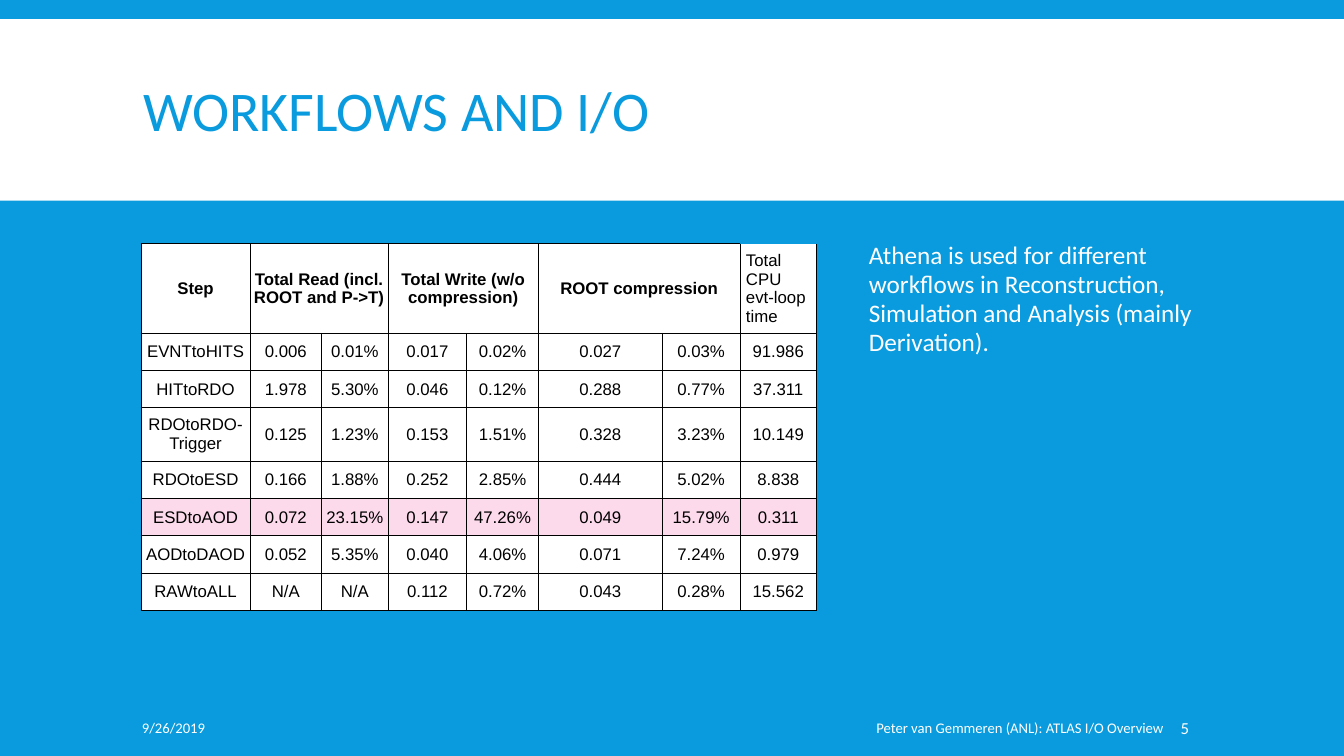
from lxml import etree
from pptx import Presentation
from pptx.dml.color import RGBColor
from pptx.enum.shapes import MSO_SHAPE
from pptx.enum.text import MSO_ANCHOR, PP_ALIGN
from pptx.oxml.ns import qn
from pptx.util import Inches, Pt

BLUE, WHITE, BLACK, PINK = "099BDD", "FFFFFF", "000000", "FCD9EB"

COLUMN_WIDTHS = [1.08, 0.71, 0.66, 0.78, 0.71, 1.23, 0.77, 0.76]
ROW_HEIGHTS = [0.88, 0.37, 0.37, 0.53, 0.37, 0.37, 0.37, 0.37]
HEADINGS = {0: "Step", 1: "Total Read (incl. ROOT and P->T)",
            3: "Total Write (w/o compression)", 5: "ROOT compression",
            7: "Total CPU evt-loop time"}
PAIRED_COLUMNS = [1, 3, 5]
HIGHLIGHTED_STEP = "ESDtoAOD"
STEPS = [
    ["EVNTtoHITS", "0.006", "0.01%", "0.017", "0.02%", "0.027", "0.03%", "91.986"],
    ["HITtoRDO", "1.978", "5.30%", "0.046", "0.12%", "0.288", "0.77%", "37.311"],
    ["RDOtoRDO-Trigger", "0.125", "1.23%", "0.153", "1.51%", "0.328", "3.23%", "10.149"],
    ["RDOtoESD", "0.166", "1.88%", "0.252", "2.85%", "0.444", "5.02%", "8.838"],
    ["ESDtoAOD", "0.072", "23.15%", "0.147", "47.26%", "0.049", "15.79%", "0.311"],
    ["AODtoDAOD", "0.052", "5.35%", "0.040", "4.06%", "0.071", "7.24%", "0.979"],
    ["RAWtoALL", "N/A", "N/A", "0.112", "0.72%", "0.043", "0.28%", "15.562"],
]


def color(value):
    return RGBColor.from_string(value)


def write(frame, text, size=12, font="Calibri", ink=WHITE, bold=False,
          align=PP_ALIGN.LEFT, line_spacing=None, before=0, after=0):
    para = frame.paragraphs[0]
    para.alignment = align
    para.line_spacing = line_spacing
    para.space_before, para.space_after = Pt(before), Pt(after)
    span = para.add_run()
    span.text = text
    span.font.size, span.font.name, span.font.bold = Pt(size), font, bold
    span.font.color.rgb = color(ink)


def set_margins(target, left, top, right, bottom):
    target.margin_left, target.margin_top = Inches(left), Inches(top)
    target.margin_right, target.margin_bottom = Inches(right), Inches(bottom)


def add_text(page, box, text, anchor=MSO_ANCHOR.TOP,
             margins=(0.1, 0.05, 0.1, 0.05), **style):
    frame = page.shapes.add_textbox(*map(Inches, box)).text_frame
    frame.word_wrap = True
    frame.vertical_anchor = anchor
    set_margins(frame, *margins)
    write(frame, text, **style)


def add_header(page, box):
    left, top, width, height = box
    # White band behind the title
    band = page.shapes.add_shape(MSO_SHAPE.RECTANGLE, *map(Inches, box))
    band.shadow.inherit = False
    band.fill.solid()
    band.fill.fore_color.rgb = color(WHITE)
    band.line.fill.background()
    page.shapes._spTree.insert(2, band._element)
    # Title
    title = page.shapes.title
    title.left, title.top = Inches(left + 1.32), Inches(top + 0.12)
    title.width, title.height = Inches(width - 2.63), Inches(height - 0.15)
    title.text_frame.word_wrap = True
    title.text_frame.vertical_anchor = MSO_ANCHOR.MIDDLE
    write(title.text_frame, "WORKFLOWS AND I/O", size=40, ink=BLUE, line_spacing=0.85)


def add_borders(cell, hidden=()):
    properties = cell._tc.get_or_add_tcPr()
    for side in ("L", "R", "T", "B"):
        line = etree.SubElement(properties, qn(f"a:ln{side}"), w=str(Pt(0.75)))
        if side in hidden:
            etree.SubElement(line, qn("a:noFill"))
        else:
            fill = etree.SubElement(line, qn("a:solidFill"))
            etree.SubElement(fill, qn("a:srgbClr"), val=BLACK)


def format_cell(cell, text, fill, is_note=False, bold=False):
    add_borders(cell, hidden=("T",) if is_note else ())
    cell.fill.solid()
    cell.fill.fore_color.rgb = color(fill)
    if is_note:
        set_margins(cell, 0.06, 0.07, 0.06, 0.07)
    else:
        set_margins(cell, 0.02, 0.03, 0.02, 0.03)
    cell.vertical_anchor = MSO_ANCHOR.TOP if is_note else MSO_ANCHOR.MIDDLE
    if text:
        write(cell.text_frame, text, font="Arial", ink=BLACK, bold=bold,
              align=PP_ALIGN.LEFT if is_note else PP_ALIGN.CENTER)


def add_timing_table(page, box):
    table = page.shapes.add_table(len(ROW_HEIGHTS), len(COLUMN_WIDTHS),
                                  *map(Inches, box)).table
    table.first_row = table.horz_banding = False
    for column, width in zip(table.columns, COLUMN_WIDTHS):
        column.width = Inches(width)
    for row, height in zip(table.rows, ROW_HEIGHTS):
        row.height = Inches(height)
    # Heading row
    last = len(COLUMN_WIDTHS) - 1
    for index in range(last + 1):
        format_cell(table.cell(0, index), HEADINGS.get(index), WHITE,
                    is_note=index == last, bold=index != last)
    for index in PAIRED_COLUMNS:
        table.cell(0, index).merge(table.cell(0, index + 1))
    # One row per workflow step
    for row_index, values in enumerate(STEPS, start=1):
        fill = PINK if values[0] == HIGHLIGHTED_STEP else WHITE
        for index, value in enumerate(values):
            format_cell(table.cell(row_index, index), value, fill)


def add_footer(page, box):
    left, top, width, height = box
    parts = [
        ("9/26/2019", 0, 3.28, (0.1, 0.05, 0.05, 0.05), 10.5, PP_ALIGN.LEFT),
        ("Peter van Gemmeren (ANL): ATLAS I/O Overview", width - 6.57, 5.52,
         (0.1, 0.05, 0.1, 0.05), 10.5, PP_ALIGN.RIGHT),
        ("5", width - 1.03, 1.03, (0.05, 0.05, 0.1, 0.05), 12, PP_ALIGN.LEFT),
    ]
    for text, offset, part_width, margins, size, align in parts:
        add_text(page, (left + offset, top, part_width, height), text,
                 anchor=MSO_ANCHOR.MIDDLE, margins=margins, size=size, align=align)


def main():
    deck = Presentation()
    deck.slide_width, deck.slide_height = Inches(13.33), Inches(7.5)
    page = deck.slides.add_slide(deck.slide_layouts[5])
    page.background.fill.solid()
    page.background.fill.fore_color.rgb = color(BLUE)

    add_header(page, (0, 0.19, 13.33, 1.8))
    add_timing_table(page, (1.4, 2.42, 6.7, 3.67))
    add_text(page, (8.52, 2.35, 3.5, 3.75),
             "Athena is used for different workflows in Reconstruction, "
             "Simulation and Analysis (mainly Derivation).",
             size=18, line_spacing=0.95, before=12, after=2)
    add_footer(page, (1.31, 7.02, 11.38, 0.4))
    deck.save("out.pptx")


if __name__ == "__main__":
    main()
